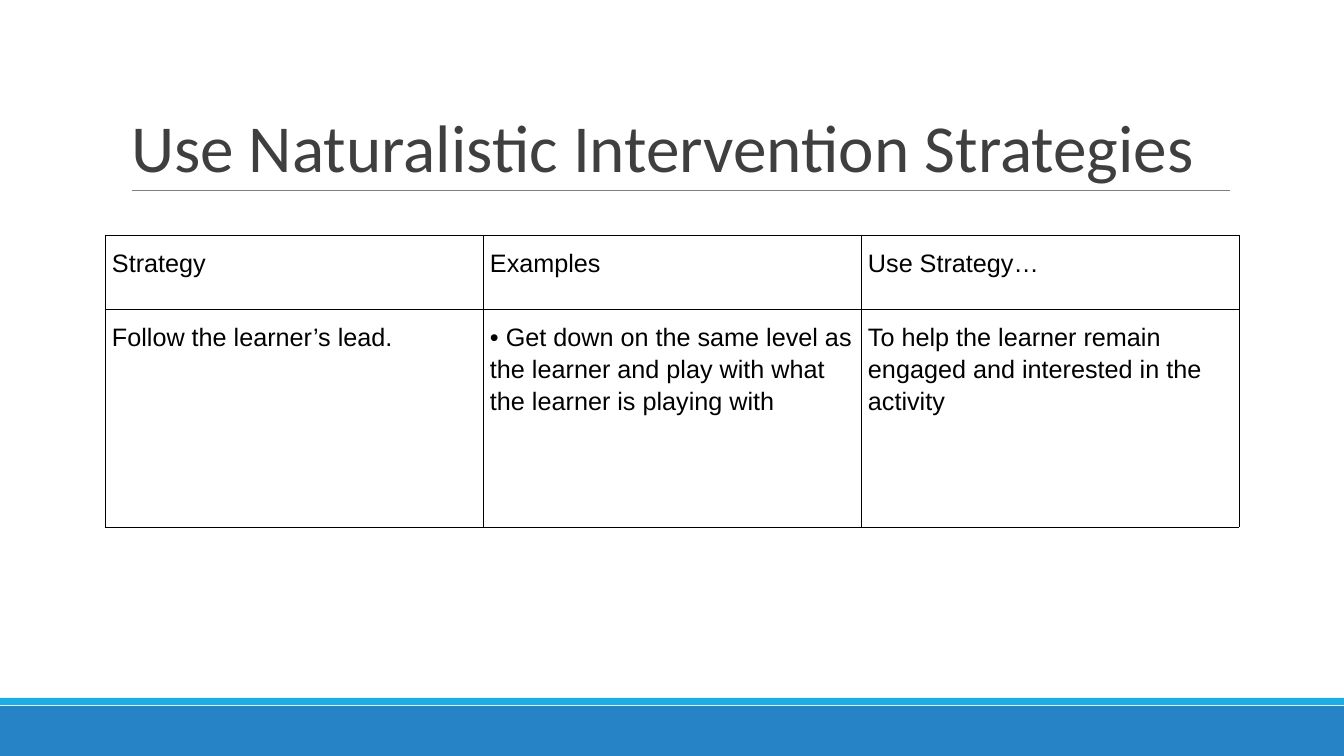
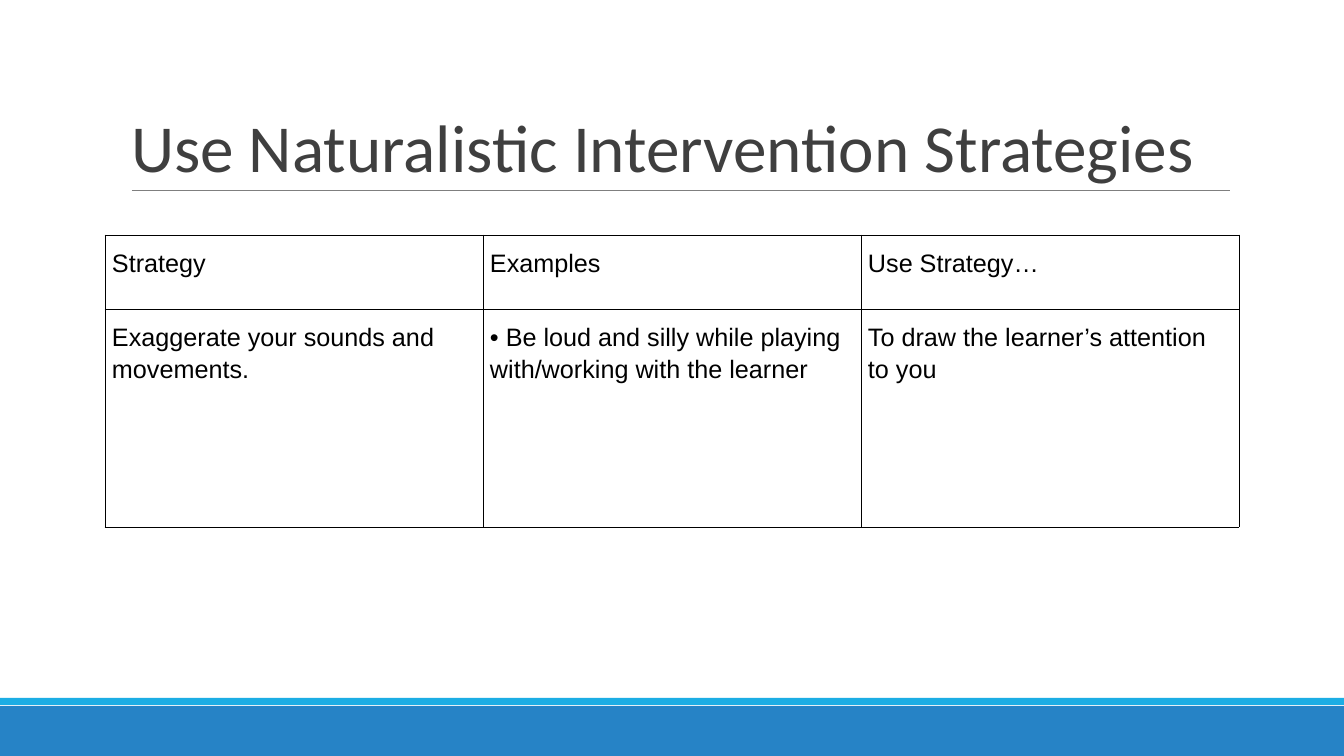
"""Build two slides on naturalistic intervention strategies."""
from dataclasses import dataclass

from lxml.etree import SubElement
from pptx import Presentation
from pptx.dml.color import RGBColor
from pptx.enum.shapes import MSO_CONNECTOR, MSO_SHAPE, PP_PLACEHOLDER
from pptx.enum.text import MSO_ANCHOR, MSO_AUTO_SIZE, PP_ALIGN
from pptx.oxml.ns import qn
from pptx.util import Emu, Pt


@dataclass(frozen=True)
class Theme:
    blue: str = "2683C6"
    cyan: str = "1CADE4"
    rule: str = "7F7F7F"
    title: str = "3F3F3F"
    ink: str = "000000"
    head: str = "Calibri"
    body: str = "Arial"
    big: int = 48
    small: int = 18
    thin: float = 0.75


LOOK = Theme()
WIDE, HIGH = 1344, 756
TITLE = "Use Naturalistic Intervention Strategies"
HEADS = ("Strategy", "Examples", "Use Strategy…")
ROWS = (
    ("Follow the learner’s lead.",
     "• Get down on the same level as the learner and play with what "
     "the learner is playing with",
     "To help the learner remain engaged and interested in the activity"),
    ("Exaggerate your sounds and movements.",
     "• Be loud and silly while playing with/working with the learner",
     "To draw the learner’s attention to you"),
)


def px(count):
    return Emu(round(count * 914400 / 100.8))


def style(frame, font, size, color, space):
    for para in frame.paragraphs:
        para.alignment = PP_ALIGN.LEFT
        para.line_spacing = space
        for run in para.runs:
            run.font.name = font
            run.font.size = Pt(size)
            run.font.bold = False
            run.font.color.rgb = RGBColor.from_string(color)


def band(slide, top, tall, color):
    bar = slide.shapes.add_shape(
        MSO_SHAPE.RECTANGLE, 0, px(top), px(WIDE), px(tall))
    bar.shadow.inherit = False
    bar.fill.solid()
    bar.fill.fore_color.rgb = RGBColor.from_string(color)
    bar.line.fill.background()
    return bar


def rule(slide, left, right, top):
    line = slide.shapes.add_connector(
        MSO_CONNECTOR.STRAIGHT, px(left), px(top), px(right), px(top))
    line.line.color.rgb = RGBColor.from_string(LOOK.rule)
    line.line.width = Pt(LOOK.thin)
    SubElement(line.element.spPr, qn("a:effectLst"))
    return line


def shape_layout(layout, slide):
    for spot in list(layout.placeholders):
        if spot.placeholder_format.type != PP_PLACEHOLDER.TITLE:
            spot.element.getparent().remove(spot.element)
            continue
        spot.left, spot.top = px(121), px(31)
        spot.width, spot.height = px(1109), px(160)
    parts = (band(slide, 706, 50, LOOK.blue), band(slide, 698, 7, LOOK.cyan),
             rule(slide, 132, 1230, 191))
    for place, part in enumerate(parts, 2):
        layout.shapes.element.insert(place, part.element)


def add_title(slide, text):
    frame = slide.shapes.title.text_frame
    frame.text = text
    frame.word_wrap = True
    frame.auto_size = MSO_AUTO_SIZE.NONE
    frame.vertical_anchor = MSO_ANCHOR.BOTTOM
    style(frame, LOOK.head, LOOK.big, LOOK.title, 0.85)


def outline(cell):
    props = cell._tc.get_or_add_tcPr()
    for side in ("lnL", "lnR", "lnT", "lnB"):
        edge = SubElement(props, qn(f"a:{side}"), w=str(Pt(LOOK.thin)))
        fill = SubElement(edge, qn("a:solidFill"))
        SubElement(fill, qn("a:srgbClr"), val=LOOK.ink)


def fill_cell(cell, text):
    cell.text_frame.text = text
    cell.margin_left = cell.margin_right = px(7)
    cell.margin_top = cell.margin_bottom = px(10)
    cell.vertical_anchor = MSO_ANCHOR.TOP
    outline(cell)
    cell.fill.background()
    style(cell.text_frame, LOOK.body, LOOK.small, LOOK.ink, 1.15)


def add_grid(slide, rows):
    wide, highs = 378, (74, 218)
    grid = slide.shapes.add_table(
        len(rows), len(HEADS), px(105), px(235),
        px(wide * len(HEADS)), px(sum(highs))).table
    grid.first_row = grid.horz_banding = False
    for col in grid.columns:
        col.width = px(wide)
    for row, high, texts in zip(grid.rows, highs, rows):
        row.height = px(high)
        for cell, text in zip(row.cells, texts):
            fill_cell(cell, text)


def main():
    deck = Presentation()
    deck.slide_width, deck.slide_height = px(WIDE), px(HIGH)
    layout = deck.slide_layouts.get_by_name("Title Only")
    slides = [deck.slides.add_slide(layout) for _ in ROWS]
    shape_layout(layout, slides[0])
    for slide, row in zip(slides, ROWS):
        add_title(slide, TITLE)
        add_grid(slide, (HEADS, row))
    deck.save("out.pptx")


if __name__ == "__main__":
    main()
